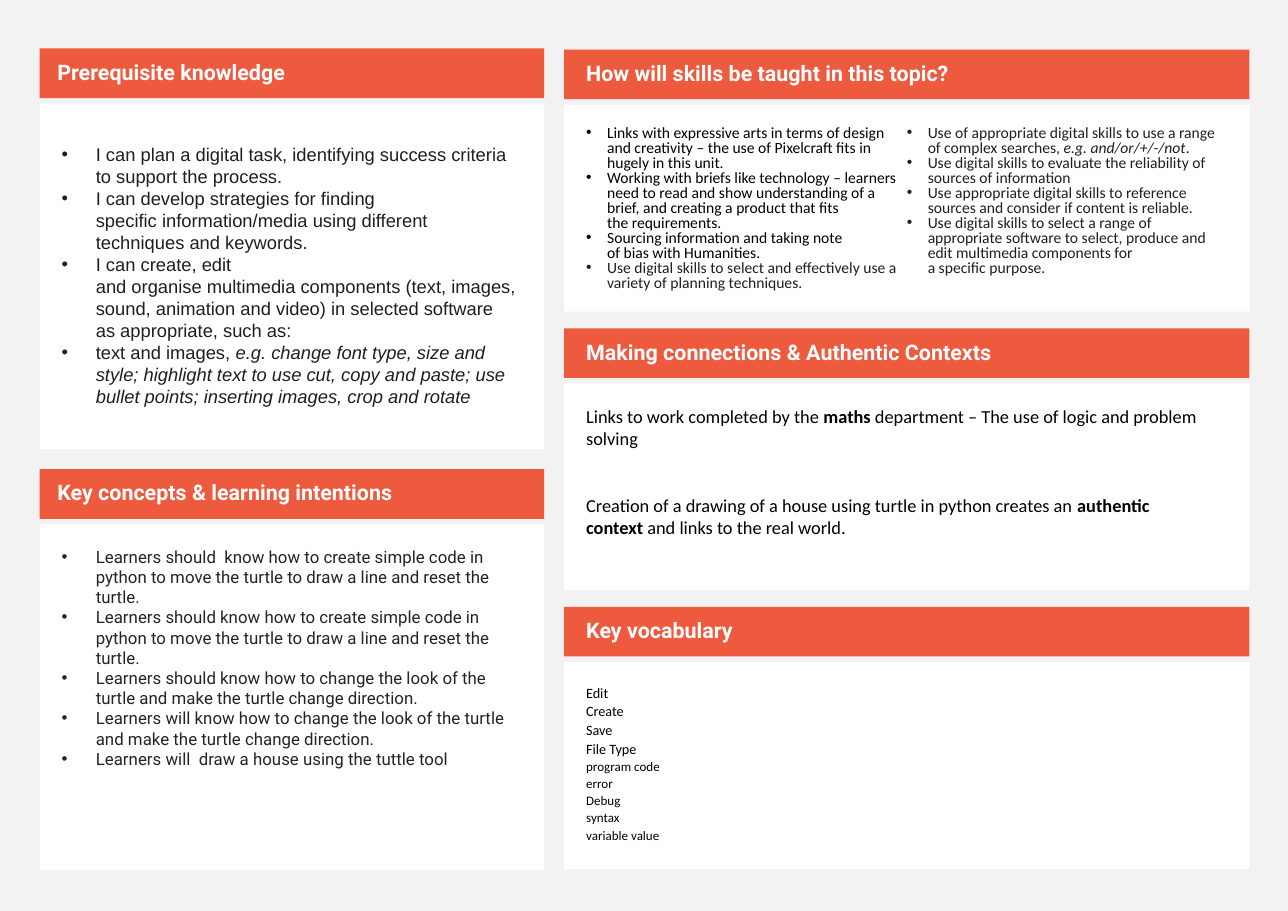
import pptx
import pptx.util
import pptx.dml.color
import pptx.enum.text
import pptx.oxml.ns
from lxml import etree

Inches, Pt = pptx.util.Inches, pptx.util.Pt
RGB = pptx.dml.color.RGBColor
COLORS = {"page": "F2F2F2", "header": "ED5A3E", "panel": "FFFFFF", "title": "FFFFFF",
          "dark": "1F1F1F", "grey": "242424", "black": "000000"}
HEADER_H, PANEL_DROP = 0.45, 0.5
NO_BREAK_SPACE = chr(160)  # typed as ~ in the texts below

prs = pptx.Presentation()
prs.slide_width, prs.slide_height = Inches(11.69), Inches(8.27)
s = prs.slides.add_slide(prs.slide_layouts.get_by_name("Comparison"))
s.background.fill.solid()
s.background.fill.fore_color.rgb = RGB.from_string(COLORS["page"])
slots = {ph.placeholder_format.idx: ph for ph in s.placeholders}


def add_box(idx, place, fill, insets, anchor):
    """Fill and place placeholder idx, or a text box when idx is None."""
    place = [Inches(v) for v in place]
    sp = s.shapes.add_textbox(*place) if idx is None else slots[idx]
    sp.left, sp.top, sp.width, sp.height = place
    sp.fill.solid()
    sp.fill.fore_color.rgb = RGB.from_string(COLORS[fill])
    tf = sp.text_frame
    tf.word_wrap = True
    tf.auto_size = pptx.enum.text.MSO_AUTO_SIZE.NONE
    tf.vertical_anchor = anchor
    tf.margin_left, tf.margin_top, tf.margin_right, tf.margin_bottom = map(Inches, insets)
    return tf


def add_paragraph(tf, runs, font, size, color, emphasis="bold", bold=False,
                  indent=0, spacing=1.0, after=0):
    """Write runs into a new paragraph; every second run is emphasised."""
    p = tf.paragraphs[0]
    if p.runs:
        p = tf.add_paragraph()
    p.alignment = pptx.enum.text.PP_ALIGN.LEFT
    p.line_spacing, p.space_before, p.space_after = spacing, Pt(0), Pt(after)
    pPr = p._p.get_or_add_pPr()
    pPr.set("marL", str(Inches(indent)))
    pPr.set("indent", str(-Inches(indent)))
    if indent:
        etree.SubElement(pPr, pptx.oxml.ns.qn("a:buFont")).set("typeface", "Arial")
        etree.SubElement(pPr, pptx.oxml.ns.qn("a:buChar")).set("char", "•")
    else:
        etree.SubElement(pPr, pptx.oxml.ns.qn("a:buNone"))
    for i, text in enumerate(runs):
        r = p.add_run()
        r.text = text.replace("~", NO_BREAK_SPACE)
        r.font.name, r.font.size = font, Pt(size)
        r.font.color.rgb = RGB.from_string(COLORS[color])
        r.font.bold = bold or (i % 2 == 1 and emphasis == "bold")
        r.font.italic = i % 2 == 1 and emphasis == "italic"


# Each section: title, (header slot, panel slot), top inset, columns, paragraph format,
# then groups of (size, colour, paragraphs), a paragraph being a list of runs.
left_sections = [
    ("Prerequisite knowledge", (0, 2), 0.36, 1,
     {"font": "Arial", "indent": 0.31, "emphasis": "italic"},
     [(12, "dark", [
         ["I can plan a digital task, identifying success~criteria to support the process."],
         ["I can develop strategies for finding specific~information/media using different "
          "techniques~and keywords."],
         ["I can create, edit and~organise~multimedia~components (text, images, sound, "
          "animation~and video) in selected software as~appropriate, such as:"],
         ["text and images,~",
          "e.g. change font type, size~and style; highlight text to use cut, copy and~paste; "
          "use bullet points; inserting images,~crop and rotate"]])]),
    ("Key concepts & learning intentions", (1, 4), 0.2, 1,
     {"font": "Roboto", "indent": 0.31},
     [(11, "grey", [
         ["Learners should~ know how to create simple code in python to move the turtle "
          "to draw a line and reset the turtle."],
         ["Learners should~know how to create simple code in python to move the turtle "
          "to draw a line and reset the turtle."],
         ["Learners should~know how to change the look of the turtle and make the turtle "
          "change direction."],
         ["Learners will~know how to change the look of the turtle and make the turtle "
          "change direction."],
         ["Learners will~ draw a house~using the tuttle tool"]])]),
]
right_sections = [
    ("How will skills be taught in this topic?", (3, None), 0.2, 2,
     {"font": "Calibri", "indent": 0.19, "spacing": 0.8, "emphasis": "italic"},
     [(10.2, "black", [
         ["Links with expressive arts in terms of design and~creativity – the use of "
          "Pixelcraft fits in hugely~in this~unit."],
         ["Working with briefs like technology – learners need to~read and show "
          "understanding of a brief, and creating a product that~fits the~requirements."],
         ["Sourcing information and taking note of~bias~with~Humanities."]]),
      (10.2, "dark", [
         ["Use digital skills to select and effectively use a variety of planning~techniques."],
         ["Use~of appropriate digital skills to use a range of complex searches,~",
          "e.g.~and/or/+/-/not", "."],
         ["Use digital skills to evaluate the reliability of sources of~information"],
         ["Use appropriate digital skills to reference sources and consider if content "
          "is~reliable."],
         ["Use digital skills to select a range of appropriate software to select, produce "
          "and edit multimedia~components for a~specific~purpose."]])]),
    ("Making connections & Authentic Contexts", (None, None), 0.2, 1,
     {"font": "Calibri", "after": 29},
     [(12, "black", [
         ["Links to work completed by the~", "maths",
          "~department – The use~of logic and problem solving"],
         ["Creation of a drawing of a~house using turtle in python creates an~",
          "authentic context", "~and links to the~real world."]])]),
    ("Key vocabulary", (None, None), 0.2, 1,
     {"font": "Calibri", "after": 1},
     [(9.3, "black", [["Edit"], ["Create"], ["Save"], ["File Type"]]),
      (8.5, "black", [["program code"], ["error"], ["Debug"], ["syntax"],
                      ["variable value"]])]),
]

# Column: left, top, width, pitch of sections, panel height, header inset
columns = [
    (0.36, 0.44, 4.58, 3.82, 3.14, 0.16, left_sections),
    (5.12, 0.45, 6.22, 2.53, 1.88, 0.2, right_sections),
]
ANCHOR = pptx.enum.text.MSO_ANCHOR
for left, first_top, width, pitch, panel_h, header_inset, sections in columns:
    for row, (title, slot, top_inset, text_cols, style, groups) in enumerate(sections):
        top = first_top + row * pitch
        tf = add_box(slot[0], (left, top, width, HEADER_H), "header",
                     (header_inset, 0.05, 0.1, 0.05), ANCHOR.MIDDLE)
        add_paragraph(tf, [title], "Roboto", 14, "title", bold=True, spacing=0.9)
        tf = add_box(slot[1], (left, top + PANEL_DROP, width, panel_h), "panel",
                     (0.2, top_inset, 0.2, 0.2), ANCHOR.TOP)
        if text_cols > 1:
            tf._txBody.bodyPr.set("numCol", str(text_cols))
        for size, color, paragraphs in groups:
            for runs in paragraphs:
                add_paragraph(tf, runs, size=size, color=color, **style)

prs.save("out.pptx")
